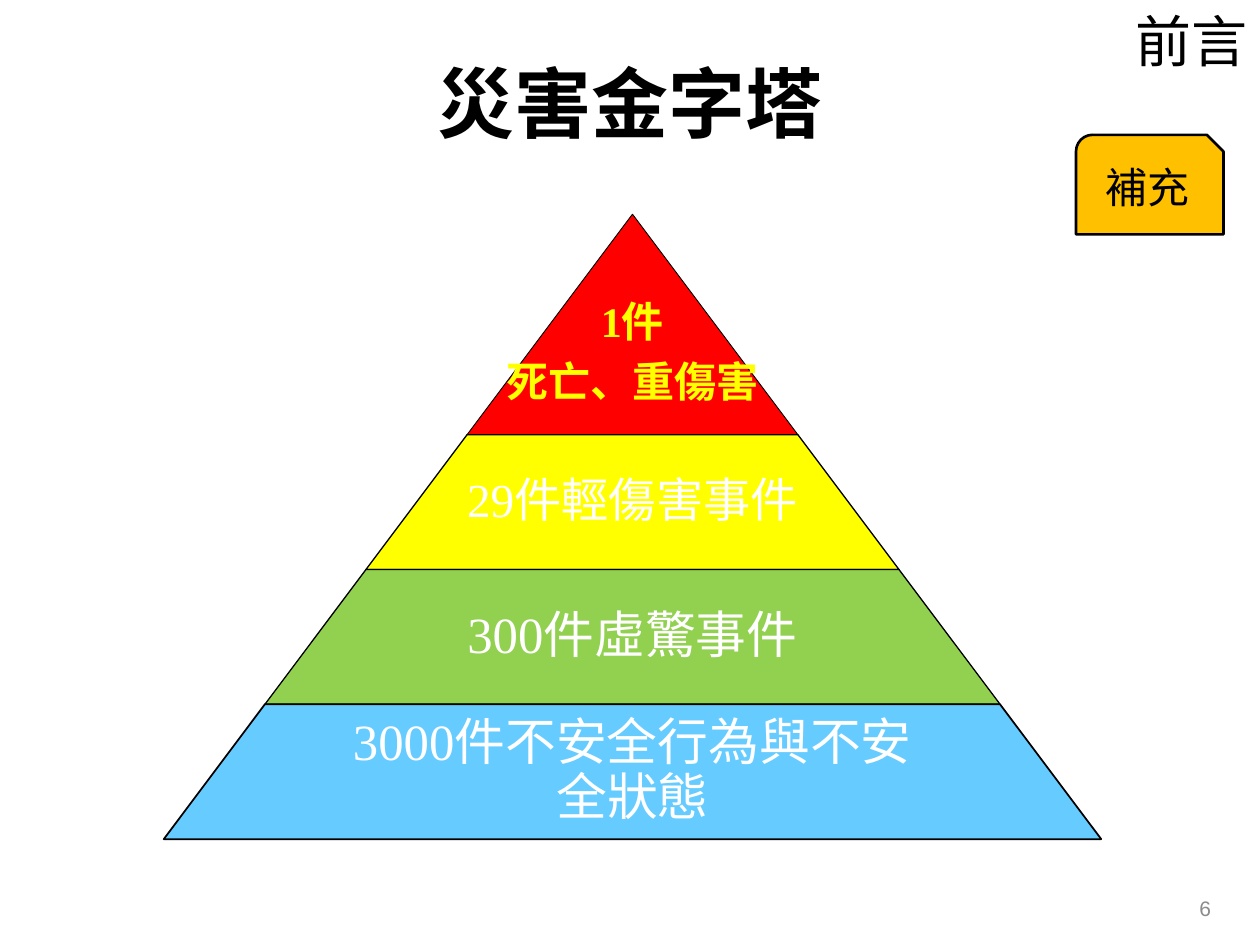
from pptx import Presentation
from pptx.dml.color import RGBColor
from pptx.enum.shapes import MSO_SHAPE
from pptx.enum.text import MSO_ANCHOR, PP_ALIGN
from pptx.util import Inches, Pt

BLACK = RGBColor(0, 0, 0)
WHITE = RGBColor(255, 255, 255)
GRAY = RGBColor(0x8C, 0x8C, 0x8C)
ORANGE = RGBColor(0xFF, 0xC0, 0)
RED = RGBColor(255, 0, 0)
YELLOW = RGBColor(255, 255, 0)
GREEN = RGBColor(0x92, 0xD0, 0x50)
BLUE = RGBColor(0x66, 0xCC, 0xFF)
SERIF = "Times New Roman"


def write(shape, text, size, color=BLACK, font=SERIF, bold=False,
          align=PP_ALIGN.CENTER, anchor=MSO_ANCHOR.MIDDLE, lead=None, after=None):
    frame = shape.text_frame
    frame.text = text
    frame.word_wrap = True
    frame.vertical_anchor = anchor
    for para in frame.paragraphs:
        para.alignment = align
        para.line_spacing = lead
        para.space_after = after
        for run in para.runs:
            run.font.size = Pt(size)
            run.font.name = font
            run.font.bold = bold
            run.font.color.rgb = color


def draw(kind, left, top, width, height, fill, line):
    shape = slide.shapes.add_shape(
        kind, Inches(left), Inches(top), Inches(width), Inches(height))
    shape.shadow.inherit = False
    shape.fill.solid()
    shape.fill.fore_color.rgb = fill
    shape.line.color.rgb = BLACK
    shape.line.width = Pt(line)
    return shape


deck = Presentation()
deck.slide_width = Inches(10)
deck.slide_height = Inches(7.5)
slide = deck.slides.add_slide(deck.slide_layouts[5])

title = slide.shapes.title
title.left, title.top = Inches(0.5), Inches(0.3)
title.width, title.height = Inches(9), Inches(1.01)
write(title, "災害金字塔", 44, bold=True)

number = slide.shapes.add_textbox(Inches(7.38), Inches(7.01), Inches(2.33), Inches(0.4))
write(number, "6", 12, color=GRAY, font="Arial", align=PP_ALIGN.RIGHT)

section = slide.shapes.add_textbox(Inches(8.54), Inches(0), Inches(1.46), Inches(0.63))
write(section, "前言", 32, font="Arial", align=PP_ALIGN.RIGHT, anchor=MSO_ANCHOR.TOP)

badge = draw(MSO_SHAPE.SNIP_ROUND_RECTANGLE, 8.54, 1.07, 1.17, 0.79, ORANGE, 1.5)
write(badge, "補充", 24)

CENTER = 5.02
SLOPE = 0.75
APEX = 1.7
levels = [
    ("1件\n死亡、重傷害", 1.75, RED, 0.5, 24, YELLOW, True, 1, 0.5),
    ("29件輕傷害事件", 1.07, YELLOW, 0.75, 27, WHITE, False, 0.65, 0.04),
    ("300件虛驚事件", 1.07, GREEN, 0.75, 29, WHITE, False, 0.65, 0.04),
    ("3000件不安全行為與不安全狀態", 1.07, BLUE, 1, 29, WHITE, False, 0.65, 0.04),
]
top = APEX
for text, height, fill, line, size, color, bold, share, inset in levels:
    width = 2 * SLOPE * (top + height - APEX)
    layer = draw(MSO_SHAPE.TRAPEZOID, CENTER - width / 2, top, width, height, fill, line)
    layer.adjustments[0] = SLOPE
    span = width * share
    label = slide.shapes.add_textbox(
        Inches(CENTER - span / 2), Inches(top), Inches(span), Inches(height))
    frame = label.text_frame
    frame.margin_left = frame.margin_right = frame.margin_bottom = Inches(0.04)
    frame.margin_top = Inches(inset)
    write(label, text, size, color=color, bold=bold, lead=0.9, after=Pt(0.35 * size))
    top += height

deck.save("out.pptx")
